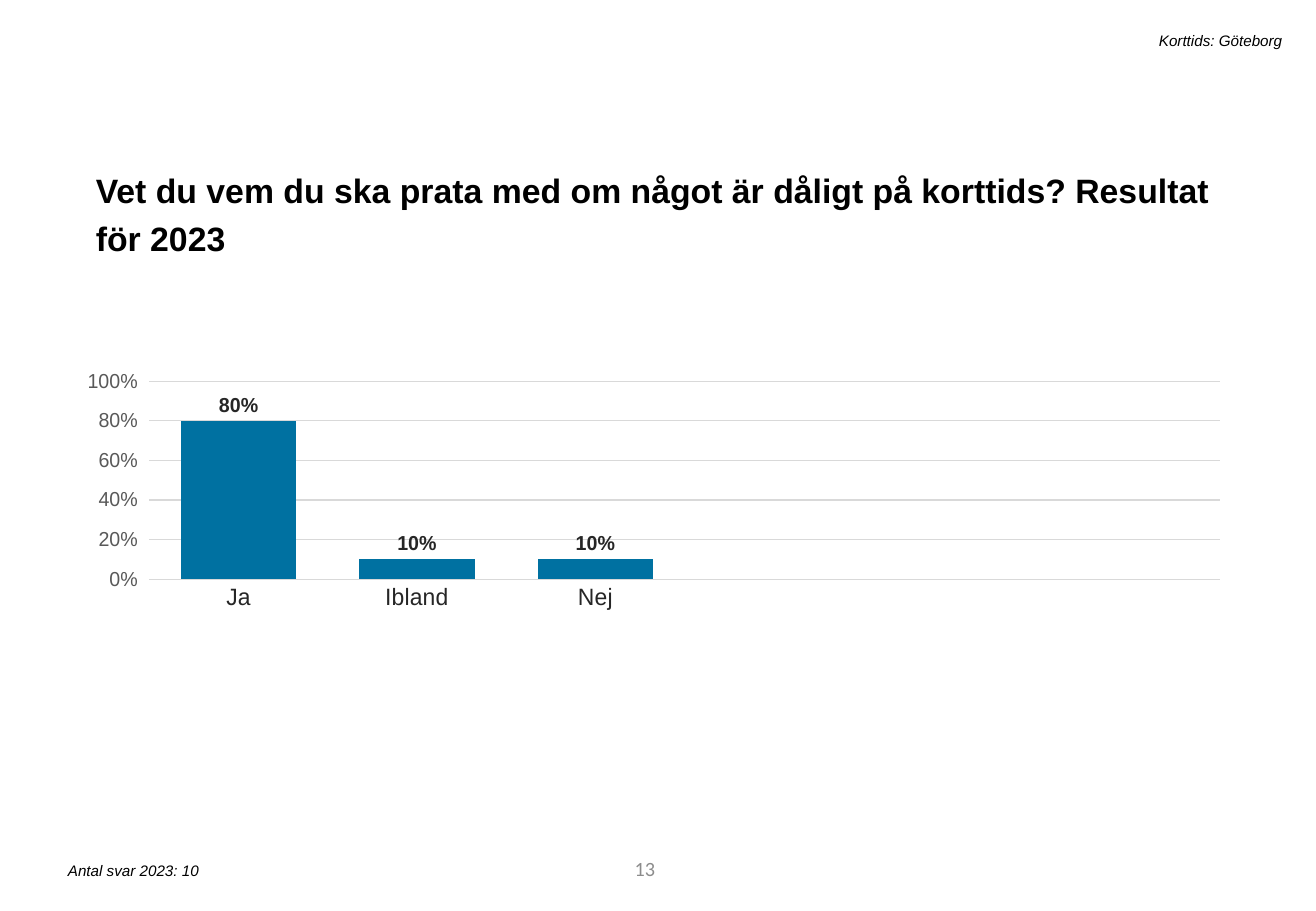
from lxml import etree
from pptx import Presentation
from pptx.chart.data import CategoryChartData
from pptx.dml.color import RGBColor
from pptx.enum.chart import XL_CHART_TYPE, XL_LABEL_POSITION, XL_TICK_MARK
from pptx.enum.text import MSO_ANCHOR, MSO_AUTO_SIZE, PP_ALIGN
from pptx.oxml.ns import qn
from pptx.util import Inches, Pt

COLUMN = XL_CHART_TYPE.COLUMN_CLUSTERED
OUTSIDE_END = XL_LABEL_POSITION.OUTSIDE_END
TICK_NONE, TICK_OUTSIDE = XL_TICK_MARK.NONE, XL_TICK_MARK.OUTSIDE
TOP, MIDDLE = MSO_ANCHOR.TOP, MSO_ANCHOR.MIDDLE
GROW, FIXED = MSO_AUTO_SIZE.SHAPE_TO_FIT_TEXT, MSO_AUTO_SIZE.NONE
LEFT, RIGHT = PP_ALIGN.LEFT, PP_ALIGN.RIGHT


def color(hex_string):
    return RGBColor.from_string(hex_string)


def format_font(font, size, hex_color="000000", name="Arial", bold=False, italic=False):
    font.size, font.name = Pt(size), name
    font.bold, font.italic = bold, italic
    font.color.rgb = color(hex_color)


def format_line(line):
    line.color.rgb = color("D9D9D9")
    line.width = Pt(0.75)


def write_text(frame, text, align=LEFT, line_spacing=None, space_before=None, **font_format):
    paragraph = frame.paragraphs[0]
    paragraph.alignment = align
    if line_spacing:
        paragraph.line_spacing = line_spacing
    if space_before:
        paragraph.space_before = Pt(space_before)
    run = paragraph.add_run()
    run.text = text
    format_font(run.font, **font_format)


class SurveySlide:
    """Places survey elements on a slide, with lengths in percent of its size."""

    def __init__(self, presentation):
        self.width, self.height = presentation.slide_width, presentation.slide_height
        self.slide = presentation.slides.add_slide(presentation.slide_layouts[6])

    def box(self, left, top, width, height):
        return (int(self.width * left / 100), int(self.height * top / 100),
                int(self.width * width / 100), int(self.height * height / 100))

    def text(self, text, place, anchor=TOP, auto_size=GROW, **text_format):
        frame = self.slide.shapes.add_textbox(*self.box(*place)).text_frame
        frame.word_wrap = True
        frame.auto_size = auto_size
        frame.vertical_anchor = anchor
        write_text(frame, text, **text_format)

    def column_chart(self, answers, place, plot_area):
        data = CategoryChartData(number_format="0%")
        data.categories = [answer for answer, share in answers]
        data.add_series("Series 1", [share for answer, share in answers])
        chart = self.slide.shapes.add_chart(COLUMN, *self.box(*place), data).chart
        chart.has_legend = chart.has_title = False
        format_font(chart.font, 10)
        self.style_axes(chart)
        self.style_columns(chart.plots[0])
        self.place_plot(chart, plot_area)

    def style_axes(self, chart):
        categories, shares = chart.category_axis, chart.value_axis
        categories.major_tick_mark = TICK_NONE
        format_line(categories.format.line)
        format_font(categories.tick_labels.font, 14, "262626")
        shares.minimum_scale, shares.maximum_scale, shares.major_unit = 0, 1, 0.2
        shares.major_tick_mark = TICK_OUTSIDE
        shares.format.line.fill.background()
        format_line(shares.major_gridlines.format.line)
        shares.tick_labels.number_format = "0%"
        shares.tick_labels.number_format_is_linked = False
        format_font(shares.tick_labels.font, 12, "595959")

    def style_columns(self, plot):
        plot.gap_width = 55
        plot.vary_by_categories = False
        series = plot.series[0]
        series.format.fill.solid()
        series.format.fill.fore_color.rgb = color("0071A1")
        labels = series.data_labels
        labels.show_value = True
        labels.position = OUTSIDE_END
        labels.number_format = "0%"
        labels.number_format_is_linked = False
        format_font(labels.font, 12, "262626", bold=True)

    def place_plot(self, chart, plot_area):
        area = chart.element.find(".//" + qn("c:plotArea"))
        for layout in area.findall(qn("c:layout")):
            area.remove(layout)
        layout = etree.Element(qn("c:layout"))
        manual = etree.SubElement(layout, qn("c:manualLayout"))
        settings = [("layoutTarget", "inner"), ("xMode", "edge"), ("yMode", "edge")]
        settings += [(key, str(share / 100)) for key, share in zip("xywh", plot_area)]
        for key, value in settings:
            etree.SubElement(manual, qn("c:" + key)).set("val", value)
        area.insert(0, layout)


def main():
    presentation = Presentation()
    presentation.slide_width, presentation.slide_height = Inches(10.83), Inches(7.5)
    survey = SurveySlide(presentation)
    survey.text("13", (28.16, 92.67, 22.53, 5.33), anchor=MIDDLE, auto_size=FIXED,
                align=RIGHT, size=12, name="Calibri", hex_color="8C8C8C")
    survey.text("Vet du vem du ska prata med om något är dåligt på korttids? Resultat för 2023",
                (6.37, 17.07, 86.8, 6.27), line_spacing=1.2, space_before=10,
                size=20, bold=True)
    survey.text("Korttids: Göteborg", (16.53, 2.8, 81.81, 3.33),
                align=RIGHT, size=9, italic=True)
    survey.text("Antal svar 2023: 10", (4.25, 93.87, 40.72, 3.33), size=9, italic=True)
    answers = [("Ja", 0.8), ("Ibland", 0.1), ("Nej", 0.1)] + [("", None)] * 3
    survey.column_chart(answers, (6.65, 33.73, 86.8, 52.67), (2.5, 15.4, 96.6, 41.3))
    presentation.save("out.pptx")


if __name__ == "__main__":
    main()
